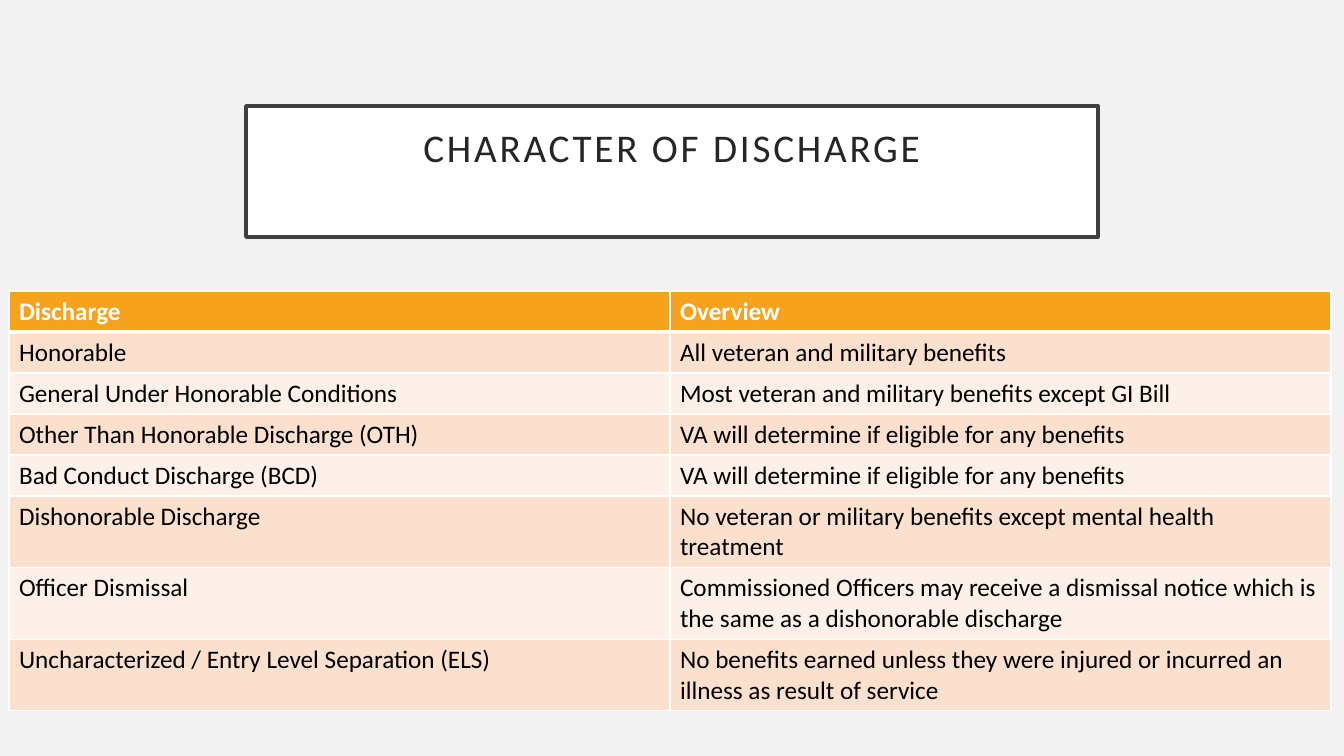
from pptx import Presentation
from pptx.dml.color import RGBColor
from pptx.enum.text import MSO_ANCHOR, MSO_AUTO_SIZE, PP_ALIGN
from pptx.oxml.ns import qn
from pptx.util import Pt
from lxml import etree

TOP, NO_FIT = MSO_ANCHOR.TOP, MSO_AUTO_SIZE.NONE
LEFT, CENTER = PP_ALIGN.LEFT, PP_ALIGN.CENTER
EMU_PER_PX = 914400 / 100.8
PAGE_SIZE = (1344, 756)
TITLE_ONLY = 5
FONT = "Calibri"
COLORS = {
    "page": "F2F2F2",
    "white": "FFFFFF",
    "frame": "404040",
    "title": "262626",
    "body": "000000",
    "header": "F6A21D",
    "odd": "FBE0CD",
    "even": "FDF0E8",
}
HEADER = ("Discharge", "Overview")
DISCHARGES = [
    ("Honorable", "All veteran and military benefits"),
    ("General Under Honorable Conditions", "Most veteran and military benefits except GI Bill"),
    ("Other Than Honorable Discharge (OTH)", "VA will determine if eligible for any benefits"),
    ("Bad Conduct Discharge (BCD)", "VA will determine if eligible for any benefits"),
    ("Dishonorable Discharge", "No veteran or military benefits except mental health treatment"),
    ("Officer Dismissal",
     "Commissioned Officers may receive a dismissal notice which is the same as a dishonorable discharge"),
    ("Uncharacterized / Entry Level Separation (ELS)",
     "No benefits earned unless they were injured or incurred an illness as result of service"),
]
ROW_HEIGHTS = [41] * 5 + [71] * 3


def px(length):
    """Turn pixels into EMU."""
    return round(length * EMU_PER_PX)


def rgb(name):
    """Look up a named colour."""
    return RGBColor.from_string(COLORS[name])


def write_text(frame, text, size=18, color="body", bold=False, align=LEFT, line_spacing=1.0, tracking=0):
    """Put one formatted paragraph in a text frame."""
    para = frame.paragraphs[0]
    para.alignment = align
    para.line_spacing = line_spacing
    span = para.add_run()
    span.text = text
    span.font.name = FONT
    span.font.size = Pt(size)
    span.font.bold = bold
    span.font.color.rgb = rgb(color)
    if tracking:
        span.font._element.set("spc", str(tracking * 100))


def set_borders(cell, **widths):
    """Draw white cell borders, with widths in points keyed by side."""
    properties = cell._tc.get_or_add_tcPr()
    for side in "LRTB":
        line = etree.SubElement(properties, qn(f"a:ln{side}"), w=str(Pt(widths.get(side, 1))))
        fill = etree.SubElement(line, qn("a:solidFill"))
        etree.SubElement(fill, qn("a:srgbClr"), val=COLORS["white"])


def format_title(page, left, top, width, height):
    """Place the framed title."""
    title = page.shapes.title
    title.left, title.top, title.width, title.height = map(px, (left, top, width, height))
    title.fill.solid()
    title.fill.fore_color.rgb = rgb("white")
    title.line.color.rgb = rgb("frame")
    title.line.width = Pt(2.5)
    frame = title.text_frame
    frame.word_wrap = True
    frame.auto_size = NO_FIT
    frame.vertical_anchor = TOP
    frame.margin_left = frame.margin_right = frame.margin_bottom = px(20)
    frame.margin_top = px(23)
    write_text(frame, "CHARACTER OF DISCHARGE", size=28, color="title",
               align=CENTER, line_spacing=0.9, tracking=2)


def add_discharge_table(page, left, top, width):
    """Add the table of discharge types and their benefits."""
    rows = [HEADER, *DISCHARGES]
    box = page.shapes.add_table(len(rows), len(HEADER), px(left), px(top), px(width), px(sum(ROW_HEIGHTS)))
    table = box.table
    for column in table.columns:
        column.width = px(width / len(HEADER))
    for index, (texts, height) in enumerate(zip(rows, ROW_HEIGHTS)):
        is_header = index == 0
        fill = "header" if is_header else "odd" if index % 2 else "even"
        table.rows[index].height = px(height)
        for cell, text in zip(table.rows[index].cells, texts):
            set_borders(cell, T=3 if index == 1 else 1, B=3 if is_header else 1)
            cell.fill.solid()
            cell.fill.fore_color.rgb = rgb(fill)
            write_text(cell.text_frame, text, color="white" if is_header else "body", bold=is_header)


def main():
    """Build and save the deck."""
    deck = Presentation()
    deck.slide_width, deck.slide_height = map(px, PAGE_SIZE)
    page = deck.slides.add_slide(deck.slide_layouts[TITLE_ONLY])
    page.background.fill.solid()
    page.background.fill.fore_color.rgb = rgb("page")
    format_title(page, 246, 106, 852, 131)
    add_discharge_table(page, 9, 291, 1322)
    deck.save("out.pptx")


if __name__ == "__main__":
    main()
